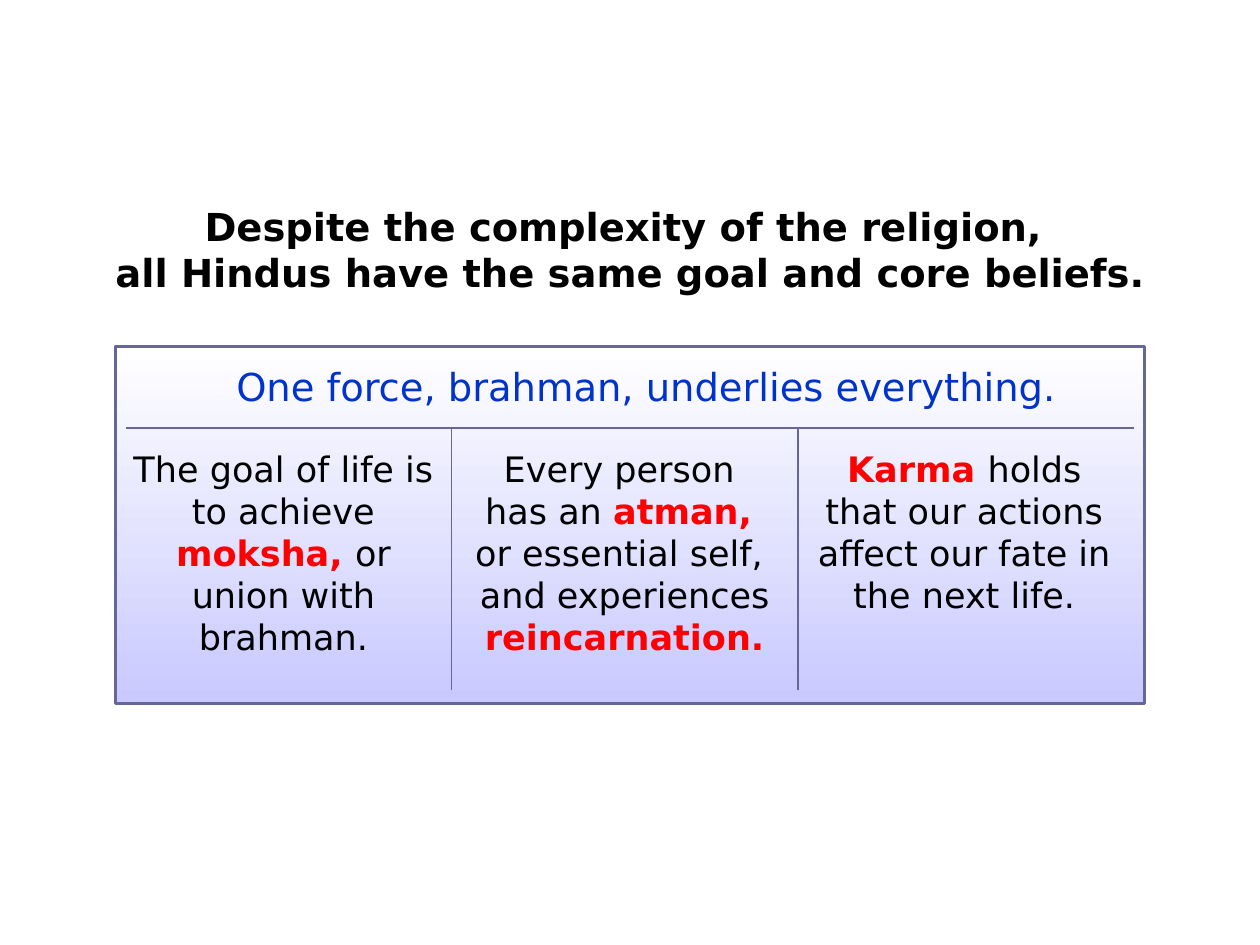
from dataclasses import dataclass

from lxml import etree
from pptx import Presentation
from pptx import util as u
from pptx.dml import color
from pptx.enum import shapes, text
from pptx.oxml import ns


@dataclass(frozen=True)
class Theme:
    font: str = "DejaVu Sans"
    ink: str = "000000"
    key: str = "FF0000"
    force: str = "0033CC"
    rule: str = "666699"
    panel_top: str = "FFFFFF"
    panel_bottom: str = "C9C9FF"
    heading: int = 22
    body: int = 20


theme = Theme()
rgb = color.RGBColor.from_string


def add_text(page, bounds, pieces, size):
    box = page.shapes.add_textbox(*map(u.Pt, bounds))
    frame = box.text_frame
    frame.word_wrap = True
    frame.auto_size = text.MSO_AUTO_SIZE.SHAPE_TO_FIT_TEXT
    para = frame.paragraphs[0]
    para.alignment = text.PP_ALIGN.CENTER
    for words, hue, bold in pieces:
        for index, line in enumerate(words.split("\n")):
            if index:
                para.add_line_break()
            if line:
                span = para.add_run()
                span.text = line
                span.font.name = theme.font
                span.font.size = u.Pt(size)
                span.font.bold = bold
                span.font.color.rgb = rgb(hue)


def add_borders(cell, sides):
    properties = cell._tc.get_or_add_tcPr()
    for position, side in enumerate(sides):
        line = etree.Element(ns.qn(f"a:ln{side}"), w=str(u.Pt(1)))
        fill = etree.SubElement(line, ns.qn("a:solidFill"))
        etree.SubElement(fill, ns.qn("a:srgbClr"), val=theme.rule)
        properties.insert(position, line)


deck = Presentation()
deck.slide_width, deck.slide_height = u.Pt(720), u.Pt(540)
page = deck.slides.add_slide(deck.slide_layouts[6])

panel = page.shapes.add_shape(
    shapes.MSO_SHAPE.RECTANGLE, u.Pt(66), u.Pt(198), u.Pt(588), u.Pt(204)
)
panel.shadow.inherit = False
panel.fill.gradient()
panel.fill.gradient_angle = 270
for stop, hue in zip(panel.fill.gradient_stops, (theme.panel_top, theme.panel_bottom)):
    stop.color.rgb = rgb(hue)
panel.line.color.rgb = rgb(theme.rule)
panel.line.width = u.Pt(1.5)

title = "Despite the complexity of the religion, \nall Hindus have the same goal and core beliefs."
add_text(page, (36, 112.5, 648, 60), [(title, theme.ink, True)], theme.heading)

grid_frame = page.shapes.add_table(2, 3, u.Pt(72), u.Pt(210), u.Pt(576), u.Pt(184.5))
grid = grid_frame.table
grid.first_row = grid.horz_banding = False
for column, width in zip(grid.columns, (186, 198, 192)):
    column.width = u.Pt(width)
for row, height in zip(grid.rows, (34.5, 150)):
    row.height = u.Pt(height)
grid.cell(0, 0).merge(grid.cell(0, 2))
for row, borders in zip(grid.rows, (("B", "B", "B"), ("RT", "LRT", "LT"))):
    for cell, sides in zip(row.cells, borders):
        cell.fill.background()
        add_borders(cell, sides)
style = grid_frame._element.find(".//" + ns.qn("a:tableStyleId"))
style.text = "{2D5ABB26-0587-4C30-8999-92F81FD0307C}"

force = "One force, brahman, underlies everything."
add_text(page, (54, 204, 630, 33.5), [(force, theme.force, False)], theme.heading)

beliefs = [
    (192, 127.5, [
        ("The goal of life is to achieve ", theme.ink, False),
        ("moksha, ", theme.key, True),
        ("or union with brahman.", theme.ink, False),
    ]),
    (198, 127.5, [
        ("Every person \nhas an ", theme.ink, False),
        ("atman, \n", theme.key, True),
        ("or essential self, \nand experiences ", theme.ink, False),
        ("reincarnation.", theme.key, True),
    ]),
    (190, 103, [
        ("Karma ", theme.key, True),
        ("holds that our actions affect our fate in the next life.", theme.ink, False),
    ]),
]
left = 66
for width, height, pieces in beliefs:
    add_text(page, (left, 252, width, height), pieces, theme.body)
    left += width

deck.save("out.pptx")
